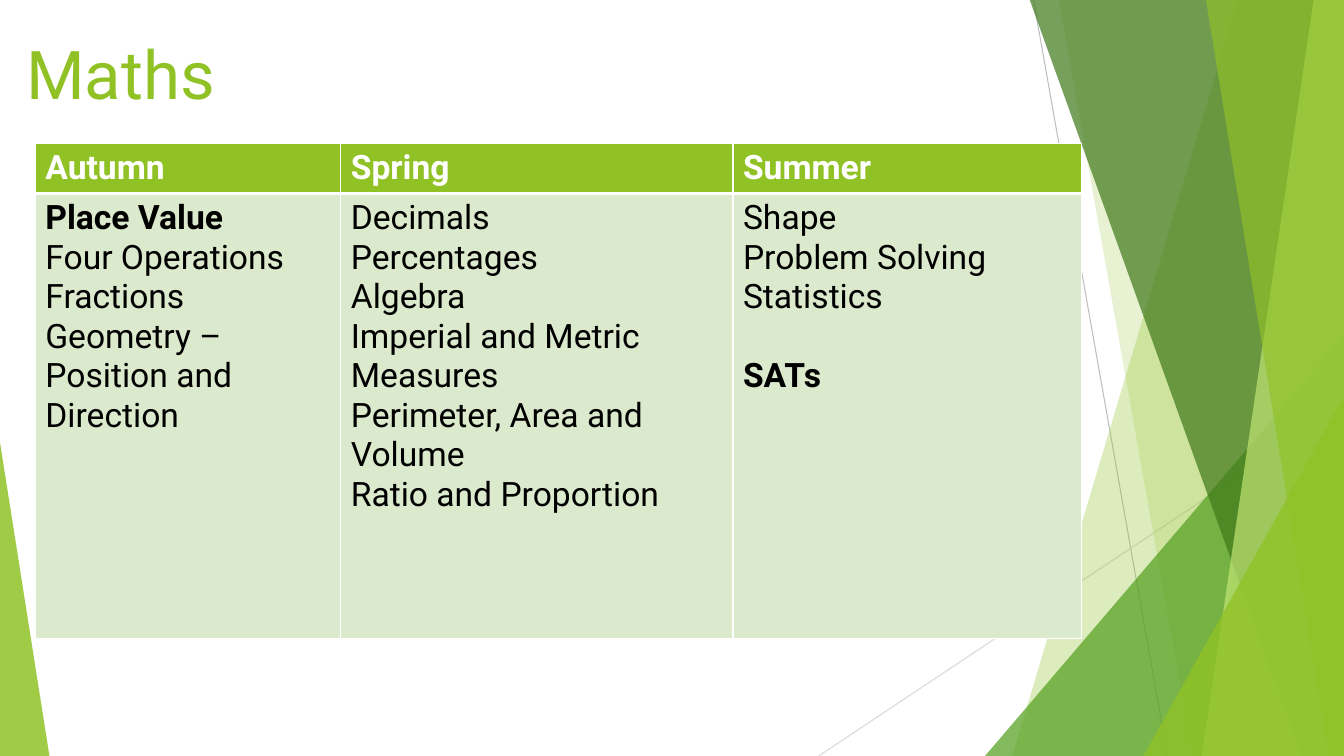
import pptx
import pptx.util
import pptx.dml.color
import pptx.enum.shapes
import pptx.enum.text
import pptx.oxml
import lxml.etree
from pptx.oxml.ns import qn

Inches, Pt = pptx.util.Inches, pptx.util.Pt
RGB = pptx.dml.color.RGBColor.from_string
C = {"green": "90C226", "leaf": "54A021", "forest": "3F7819", "lime": "C0E474",
     "pale": "DBE9CD", "white": "FFFFFF", "black": "000000",
     "grey": "BFBFBF", "light_grey": "D9D9D9"}
W, H = 13.33, 7.5
TOP = -0.01

prs = pptx.Presentation()
prs.slide_width, prs.slide_height = Inches(W), Inches(H)
s = prs.slides.add_slide(prs.slide_layouts[6])


def style_facet(sp, color, opacity):
    """Fill a decorative shape with a partly transparent colour and no outline."""
    sp.shadow.inherit = False
    sp.line.fill.background()
    sp.fill.solid()
    sp.fill.fore_color.rgb = RGB(C[color])
    clr = sp.fill._xPr.find(qn("a:solidFill"))[0]
    lxml.etree.SubElement(clr, qn("a:alpha"), val=str(opacity * 1000))


def write(p, text, size, color, bold=False):
    r = p.add_run()
    r.text = text
    for name, value in {"name": "Roboto", "size": Pt(size), "bold": bold}.items():
        setattr(r.font, name, value)
    r.font.color.rgb = RGB(C[color])


# Thin background lines
for x1, y1, x2, y2, color in [(10.25, 0, 11.58, H, "grey"),
                              (W, 4.03, 8.12, H, "light_grey")]:
    line = s.shapes.add_connector(pptx.enum.shapes.MSO_CONNECTOR.STRAIGHT,
                                  Inches(x1), Inches(y1), Inches(x2), Inches(y2))
    line.line.color.rgb = RGB(C[color])
    line.line.width = Pt(0.75)
    lxml.etree.SubElement(line._element.spPr, qn("a:effectLst"))

# Facets, back to front: bands run from the top edge to the bottom edge
facets = [
    ("band", 12.28, 10.04, "green", 30),
    ("band", 10.5, 11.83, "green", 20),
    ("triangle", 9.77, 3.33, 3.56, 1, "leaf", 72),
    ("band", 10.21, 12.91, "forest", 70),
    ("band", 13.03, 11.92, "lime", 70),
    ("band", 11.96, 13.18, "green", 65),
    ("triangle", 11.34, 3.93, 1.99, 1, "green", 80),
    ("triangle", 0, 4.39, 0.49, 0, "green", 85),
]
for kind, *geometry, color, opacity in facets:
    if kind == "band":
        top_x, bottom_x = geometry
        fb = s.shapes.build_freeform(Inches(top_x), Inches(TOP))
        fb.add_line_segments([(Inches(x), Inches(y)) for x, y in
                              [(W, TOP), (W, H), (bottom_x, H)]], close=True)
        sp = fb.convert_to_shape()
    else:
        x, y, width, apex = geometry
        sp = s.shapes.add_shape(pptx.enum.shapes.MSO_SHAPE.ISOSCELES_TRIANGLE,
                                Inches(x), Inches(y), Inches(width), Inches(H - y))
        sp.adjustments[0] = apex
    style_facet(sp, color, opacity)

# Title
title = s.shapes.add_textbox(Inches(0.16), Inches(0.27), Inches(9.4), Inches(1.44))
title.text_frame.word_wrap = True
write(title.text_frame.paragraphs[0], "Maths", 48, "green")

# Topics by term
terms = {
    "Autumn": ["Place Value", "Four Operations", "Fractions",
               "Geometry – Position and Direction"],
    "Spring": ["Decimals", "Percentages", "Algebra", "Imperial and Metric Measures",
               "Perimeter, Area and Volume", "Ratio and Proportion"],
    "Summer": ["Shape", "Problem Solving", "Statistics", "SATs"],
}
col_widths, row_heights = [3.03, 3.89, 3.46], [0.49, 4.41]
table = s.shapes.add_table(2, 3, Inches(0.35), Inches(1.42), Inches(sum(col_widths)),
                           Inches(sum(row_heights))).table
for row, height in zip(table.rows, row_heights):
    row.height = Inches(height)
for i, (term, topics) in enumerate(terms.items()):
    table.columns[i].width = Inches(col_widths[i])
    for j, (lines, fill, color) in enumerate([([term], "green", "white"),
                                              (topics, "pale", "black")]):
        cell = table.cell(j, i)
        heavy_side = "B" if j == 0 else "T"
        for side in "LRTB":
            width = Pt(3 if side == heavy_side else 1)
            ln = lxml.etree.SubElement(cell._tc.get_or_add_tcPr(), qn(f"a:ln{side}"),
                                       w=str(width))
            solid = lxml.etree.SubElement(ln, qn("a:solidFill"))
            lxml.etree.SubElement(solid, qn("a:srgbClr"), val=C["white"])
        cell.fill.solid()
        cell.fill.fore_color.rgb = RGB(C[fill])
        tf = cell.text_frame
        for k, text in enumerate(lines):
            p = tf.add_paragraph() if k else tf.paragraphs[0]
            write(p, text, 24, color, j == 0 or text in ("Place Value", "SATs"))
            if text == "SATs":
                p.space_before = Pt(28)

prs.save("out.pptx")
